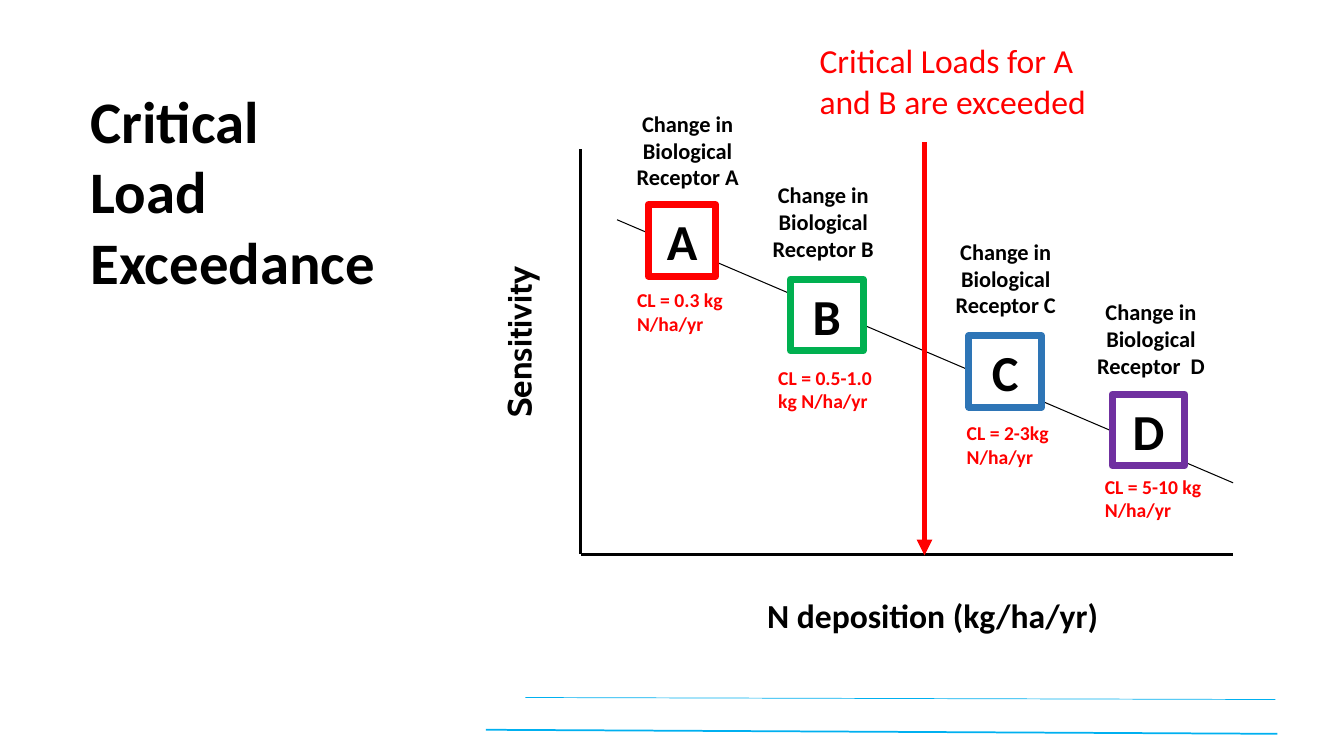
"""Build the critical load exceedance slide."""
from lxml import etree
from pptx import Presentation
from pptx.dml.color import RGBColor
from pptx.enum.shapes import MSO_CONNECTOR, MSO_SHAPE
from pptx.enum.text import MSO_ANCHOR, PP_ALIGN
from pptx.oxml.ns import qn
from pptx.util import Pt

EMU_PER_PX = 9144
BLACK = RGBColor(0, 0, 0)
WHITE = RGBColor(255, 255, 255)
RED = RGBColor(255, 0, 0)
GREEN = RGBColor(0, 176, 80)
BLUE = RGBColor(46, 117, 182)
PURPLE = RGBColor(112, 48, 160)
SKY = RGBColor(0, 176, 240)
STRAIGHT = MSO_CONNECTOR.STRAIGHT
RECTANGLE = MSO_SHAPE.RECTANGLE
LEFT, CENTER = PP_ALIGN.LEFT, PP_ALIGN.CENTER
TOP, MIDDLE = MSO_ANCHOR.TOP, MSO_ANCHOR.MIDDLE

FOOTER_LINES = [
    ((521, 692, 1265, 694), SKY, 0.5),
    ((482, 724, 1267, 728), SKY, 1.25),
]
CHART_LINES = [
    ((576, 148, 576, 550), BLACK, 2.5),
    ((576, 550, 1223, 550), BLACK, 2.5),
    ((612, 218, 1223, 479), BLACK, 0.75),
]
EXCEEDANCE_ARROW = (917, 141, 917, 551)
HEADINGS = [
    ("Critical Load Exceedance", (80, 79, 310, 151), dict(size=42, bold=True)),
    ("N deposition (kg/ha/yr)", (751, 585, 369, 51), dict(size=24, bold=True)),
    ("Sensitivity", (407, 292, 214, 50),
     dict(size=24, bold=True, font="Cabin", rotation=270)),
    ("Critical Loads for A and B are exceeded", (803, 35, 290, 91),
     dict(size=24, color=RED)),
]
RECEPTORS = [
    ("A", RED, (643, 203, 67, 71), "Change in Biological Receptor A",
     (601, 104, 162, 91), "CL = 0.3 kg N/ha/yr", (622, 281, 108, 57)),
    ("B", GREEN, (784, 277, 72, 71), "Change in Biological Receptor B",
     (737, 175, 159, 91), "CL = 0.5-1.0 kg N/ha/yr", (762, 358, 128, 57)),
    ("C", BLUE, (961, 333, 72, 71), "Change in Biological Receptor C",
     (909, 231, 177, 91), "CL = 2-3kg N/ha/yr", (949, 413, 106, 57)),
    ("D", PURPLE, (1103, 391, 72, 71), "Change in Biological Receptor  D",
     (1062, 291, 159, 91), "CL = 5-10 kg N/ha/yr", (1086, 466, 129, 57)),
]


def to_emu(lengths):
    return [length * EMU_PER_PX for length in lengths]


def write_text(shape, text, size, color=BLACK, bold=False, font="Calibri",
               align=LEFT, anchor=TOP, rotation=0):
    shape.rotation = rotation
    frame = shape.text_frame
    frame.word_wrap = True
    frame.vertical_anchor = anchor
    paragraph = frame.paragraphs[0]
    paragraph.alignment = align
    run = paragraph.add_run()
    run.text = text
    run.font.name = font
    run.font.size = Pt(size)
    run.font.bold = bold
    run.font.color.rgb = color


def add_label(slide, text, box, **text_format):
    write_text(slide.shapes.add_textbox(*to_emu(box)), text, **text_format)


def add_line(slide, ends, color, width, arrow=False):
    connector = slide.shapes.add_connector(STRAIGHT, *to_emu(ends))
    connector.line.color.rgb = color
    connector.line.width = Pt(width)
    properties = connector._element.spPr
    if arrow:
        etree.SubElement(properties.find(qn("a:ln")), qn("a:tailEnd"), type="triangle")
    etree.SubElement(properties, qn("a:effectLst"))


def add_receptor_square(slide, letter, color, box):
    square = slide.shapes.add_shape(RECTANGLE, *to_emu(box))
    square.shadow.inherit = False
    square.fill.solid()
    square.fill.fore_color.rgb = WHITE
    square.line.color.rgb = color
    square.line.width = Pt(5)
    write_text(square, letter, size=36, bold=True, align=CENTER, anchor=MIDDLE)


def main():
    presentation = Presentation()
    presentation.slide_width, presentation.slide_height = to_emu((1333, 750))
    slide = presentation.slides.add_slide(presentation.slide_layouts[6])

    for ends, color, width in FOOTER_LINES + CHART_LINES:
        add_line(slide, ends, color, width)
    for text, box, text_format in HEADINGS:
        add_label(slide, text, box, **text_format)
    for letter, color, square_box, change, change_box, load, load_box in RECEPTORS:
        add_label(slide, change, change_box, size=16, bold=True, align=CENTER)
        add_receptor_square(slide, letter, color, square_box)
        add_label(slide, load, load_box, size=14, bold=True, color=RED)
    add_line(slide, EXCEEDANCE_ARROW, RED, 3.75, arrow=True)

    presentation.save("out.pptx")


if __name__ == "__main__":
    main()
